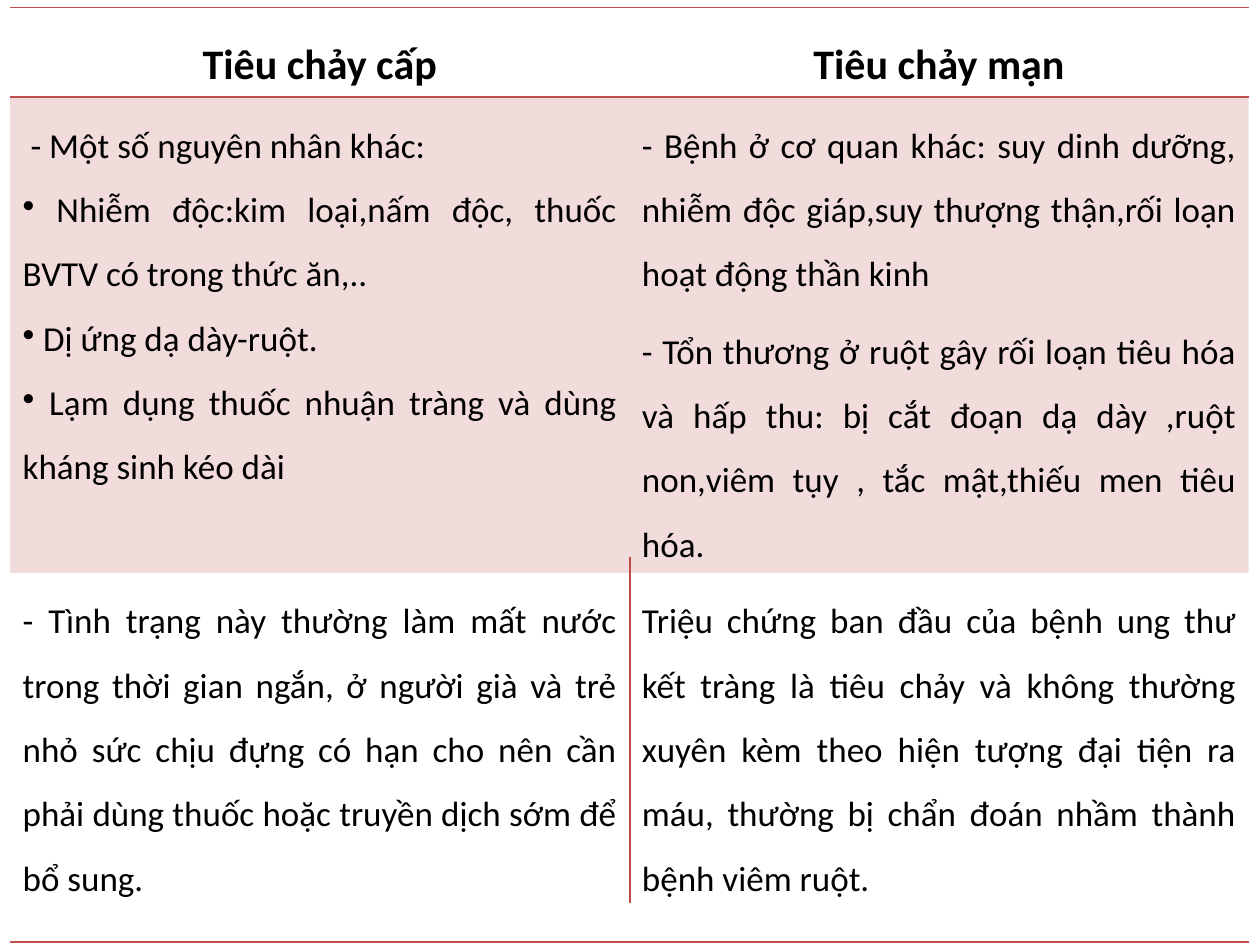
from lxml import etree
from pptx import Presentation
from pptx.dml.color import RGBColor
from pptx.enum import shapes, text
from pptx.oxml import ns
from pptx.util import Inches, Pt

RED = RGBColor(0xC0, 0x50, 0x4D)
RULE = RGBColor(0xBF, 0x4C, 0x48)
BLACK = RGBColor(0, 0, 0)
NO_STYLE = "{2D5ABB26-0587-4C30-8999-92F81FD0307C}"

# Content: rows of cells, each cell a list of (text, space before, bullet)
ROWS = [
    [[("Tiêu chảy cấp", 0, False)], [("Tiêu chảy mạn", 0, False)]],
    [
        [(" - Một số nguyên nhân khác:", 7.5, False),
         (" Nhiễm độc:kim loại,nấm độc, thuốc BVTV có trong thức ăn,..", 0, True),
         (" Dị ứng dạ dày-ruột.", 0, True),
         (" Lạm dụng thuốc nhuận tràng và dùng kháng sinh kéo dài", 0, True)],
        [("- Bệnh ở cơ quan khác: suy dinh dưỡng, nhiễm độc giáp,suy thượng "
          "thận,rối loạn hoạt động thần kinh", 7.5, False),
         ("- Tổn thương ở ruột gây rối loạn tiêu hóa và hấp thu: bị cắt đoạn "
          "dạ dày ,ruột non,viêm tụy , tắc mật,thiếu men tiêu hóa.", 7.5, False)],
    ],
    [
        [("- Tình trạng này thường làm mất nước trong thời gian ngắn, ở người "
          "già và trẻ nhỏ sức chịu đựng có hạn cho nên cần phải dùng thuốc "
          "hoặc truyền dịch sớm để bổ sung.", 0, False)],
        [("Triệu chứng ban đầu của bệnh ung thư kết tràng là tiêu chảy và "
          "không thường xuyên kèm theo hiện tượng đại tiện ra máu, thường bị "
          "chẩn đoán nhầm thành bệnh viêm ruột.", 0, False)],
    ],
]
HEIGHTS = [0.68, 3.3, 2.93]
EDGES = [("lnT", "lnB"), (), ("lnB",)]
TINTED = 1


def add(parent, tag, **attrs):
    return etree.SubElement(parent, ns.qn(tag), attrs)


def write(frame, paras, head):
    for i, (words, gap, bullet) in enumerate(paras):
        para = frame.add_paragraph() if i else frame.paragraphs[0]
        para.text = words
        para.alignment = text.PP_ALIGN.CENTER if head else text.PP_ALIGN.JUSTIFY
        para.line_spacing = 1.5
        para.space_before = Pt(gap)
        if bullet:
            add(para._p.get_or_add_pPr(), "a:buChar", char="•")
        font = para.font
        font.name = "Calibri"
        font.size = Pt(24 if head else 20)
        font.bold = head
        font.color.rgb = BLACK


def edge(cell, sides):
    props = cell._tc.get_or_add_tcPr()
    for i, side in enumerate(sides):
        line = etree.Element(ns.qn("a:" + side), {"w": str(Pt(1))})
        add(add(line, "a:solidFill"), "a:srgbClr", val=str(RED))
        props.insert(i, line)


def tint(cell):
    cell.fill.solid()
    cell.fill.fore_color.rgb = RED
    color = cell._tc.tcPr.find(".//" + ns.qn("a:srgbClr"))
    add(color, "a:alpha", val="20000")


deck = Presentation()
deck.slide_width, deck.slide_height = Inches(10), Inches(7.5)
slide = deck.slides.add_slide(deck.slide_layouts[6])

# Comparison table
frame = slide.shapes.add_table(len(ROWS), 2, Inches(0.08), Inches(0.06),
                               Inches(9.83), Inches(sum(HEIGHTS)))
table = frame.table
table.first_row = table.horz_banding = False
table._tbl.tblPr.find(ns.qn("a:tableStyleId")).text = NO_STYLE
for r, (row, high) in enumerate(zip(ROWS, HEIGHTS)):
    table.rows[r].height = Inches(high)
    for c, paras in enumerate(row):
        cell = table.cell(r, c)
        write(cell.text_frame, paras, r == 0)
        if r == TINTED:
            tint(cell)
        else:
            cell.fill.background()
        edge(cell, EDGES[r])

# Divider between the lower cells
line = slide.shapes.add_connector(shapes.MSO_CONNECTOR.STRAIGHT, Inches(5),
                                  Inches(4.42), Inches(5), Inches(7.17))
line.line.color.rgb = RULE
line.line.width = Pt(0.75)
add(line._element.spPr, "a:effectLst")

deck.save("out.pptx")
